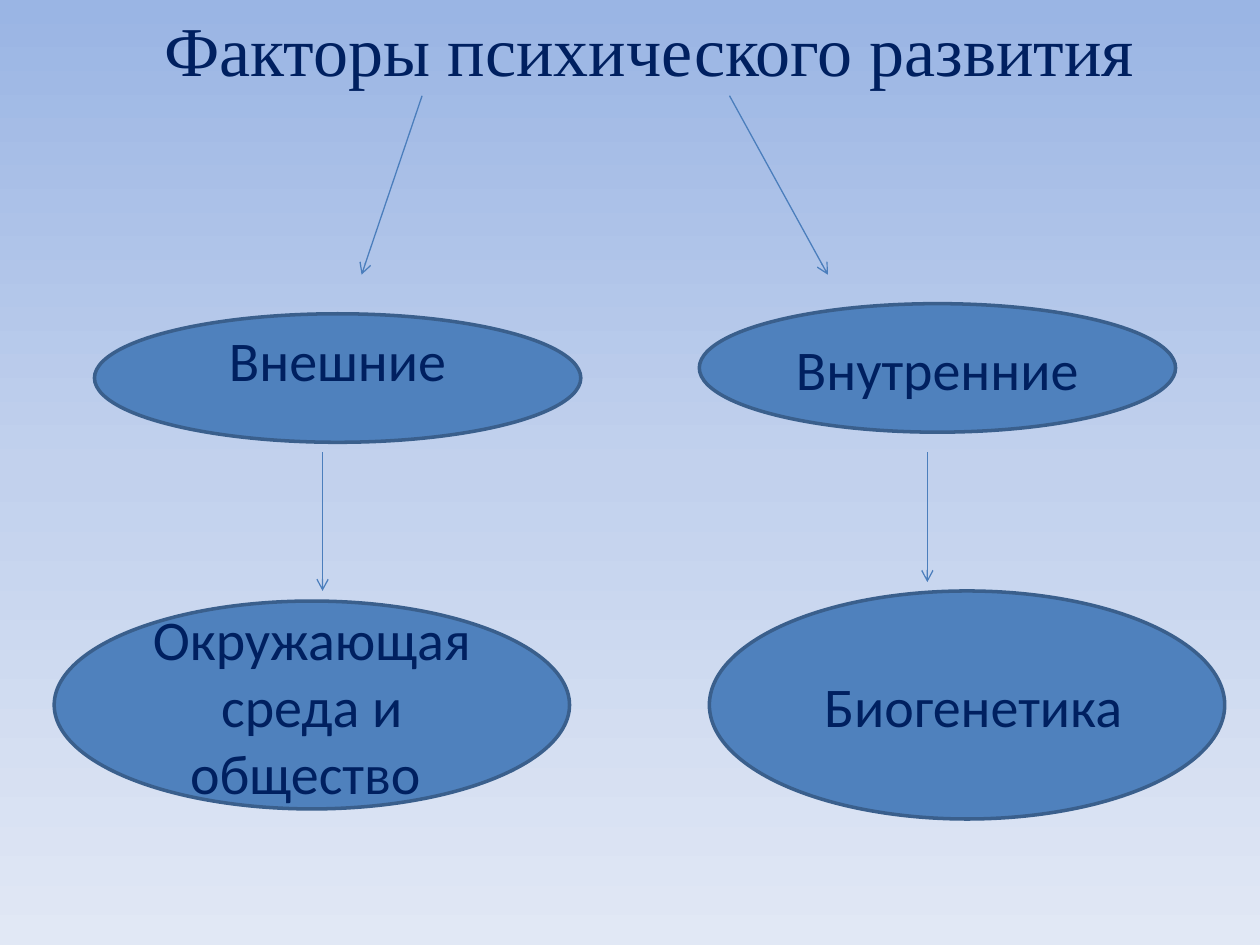
from copy import deepcopy
from dataclasses import dataclass

from lxml import etree
from pptx import Presentation
from pptx.dml.color import RGBColor
from pptx.enum.shapes import MSO_CONNECTOR, MSO_SHAPE
from pptx.enum.text import MSO_ANCHOR, PP_ALIGN
from pptx.oxml.ns import qn
from pptx.util import Inches, Pt

ELLIPSE = MSO_SHAPE.OVAL
STRAIGHT = MSO_CONNECTOR.STRAIGHT
CENTER = PP_ALIGN.CENTER
MIDDLE = MSO_ANCHOR.MIDDLE

NAVY = "002060"
OVAL_FILL = "4F81BD"
OVAL_LINE = "3A5F8C"
ARROW_LINE = "4B7EBC"
SKY = [(0, "9AB5E4"), (0.5, "C2D1ED"), (1, "E1E8F5")]


@dataclass
class Factor:
    text: str
    left: float
    top: float
    width: float
    height: float
    bottom_inset: float = 0.05


@dataclass
class Arrow:
    start: tuple[float, float]
    end: tuple[float, float]


FACTORS = [
    Factor("Внешние", 0.75, 2.49, 3.86, 1.02, bottom_inset=0.35),
    Factor("Внутренние", 5.55, 2.41, 3.78, 1.02),
    Factor("Окружающая\nсреда и общество ", 0.43, 4.77, 4.09, 1.65),
    Factor(" Биогенетика", 5.63, 4.69, 4.09, 1.81),
]
ARROWS = [
    Arrow((3.35, 0.76), (2.87, 2.18)),
    Arrow((5.79, 0.76), (6.57, 2.18)),
    Arrow((2.56, 3.59), (2.56, 4.69)),
    Arrow((7.36, 3.59), (7.36, 4.62)),
]


def color(value: str) -> RGBColor:
    return RGBColor.from_string(value)


def paint_background(page) -> None:
    fill = page.background.fill
    fill.gradient()
    fill.gradient_angle = 270
    # A new gradient has two stops; the middle one is a copy of the first
    first = page.background._cSld.find(".//" + qn("a:gs"))
    first.addnext(deepcopy(first))
    for stop, (position, value) in zip(fill.gradient_stops, SKY):
        stop.position = position
        stop.color.rgb = color(value)


def write_text(frame, text: str, font: str, size: int) -> None:
    frame.word_wrap = True
    frame.text = text
    for paragraph in frame.paragraphs:
        paragraph.alignment = CENTER
        for span in paragraph.runs:
            span.font.name = font
            span.font.size = Pt(size)
            span.font.color.rgb = color(NAVY)


def draw_title(page, text: str) -> None:
    box = page.shapes.add_textbox(Inches(0.17), 0, Inches(9.83), Inches(2.12))
    write_text(box.text_frame, text, "Times New Roman", 40)


def draw_factor(page, factor: Factor) -> None:
    oval = page.shapes.add_shape(
        ELLIPSE, Inches(factor.left), Inches(factor.top),
        Inches(factor.width), Inches(factor.height))
    oval.shadow.inherit = False
    oval.fill.solid()
    oval.fill.fore_color.rgb = color(OVAL_FILL)
    oval.line.color.rgb = color(OVAL_LINE)
    oval.line.width = Pt(2)
    frame = oval.text_frame
    frame.vertical_anchor = MIDDLE
    frame.margin_bottom = Inches(factor.bottom_inset)
    write_text(frame, factor.text, "Calibri", 32)


def draw_arrow(page, arrow: Arrow) -> None:
    points = [Inches(value) for value in arrow.start + arrow.end]
    connector = page.shapes.add_connector(STRAIGHT, *points)
    connector.line.color.rgb = color(ARROW_LINE)
    connector.line.width = Pt(0.75)
    # Open arrowhead at the end, no shadow
    etree.SubElement(connector.line._get_or_add_ln(), qn("a:tailEnd"), type="arrow")
    etree.SubElement(connector._element.spPr, qn("a:effectLst"))


def main() -> None:
    deck = Presentation()
    deck.slide_width = Inches(10)
    deck.slide_height = Inches(7.5)
    page = deck.slides.add_slide(deck.slide_layouts[6])

    paint_background(page)
    draw_title(page, " Факторы психического развития")
    for arrow in ARROWS:
        draw_arrow(page, arrow)
    for factor in FACTORS:
        draw_factor(page, factor)

    deck.save("out.pptx")


if __name__ == "__main__":
    main()
